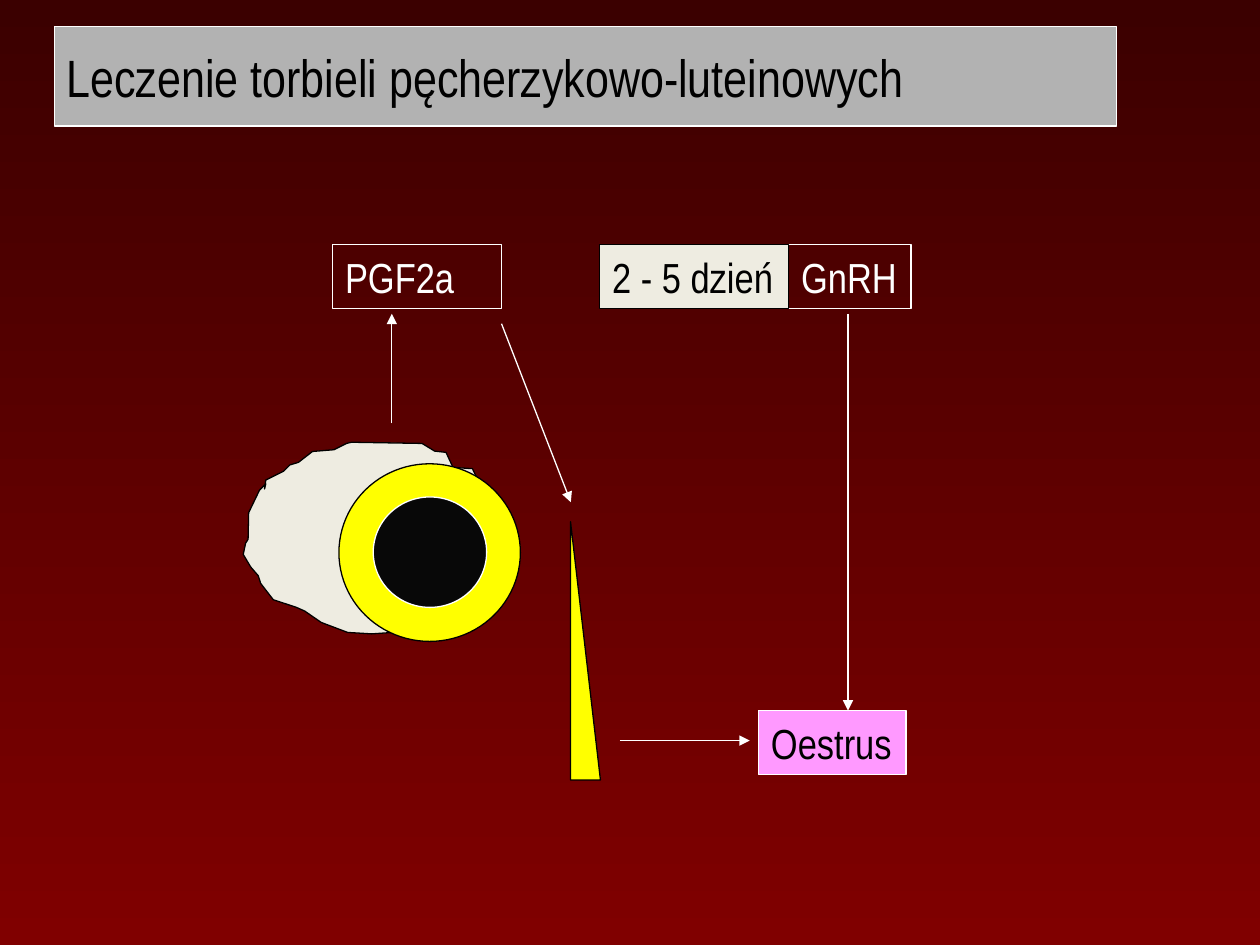
from lxml import etree
from pptx import Presentation
from pptx import util as u
from pptx.dml.color import RGBColor
from pptx.enum import shapes, text
from pptx.oxml.ns import qn

COLORS = {
    "top": "3B0000", "bottom": "800000", "white": "FFFFFF", "black": "000000",
    "grey": "B2B2B2", "cream": "EEECE1", "pink": "FF99FF", "yellow": "FFFF00",
    "cavity": "080808",
}
FONT = "Arial Narrow"
ROW_TOP, BOX_HEIGHT = 139.7, 36.72

# Content: text, (left, top, width, height), size, fill, line, text colour, wrap
BOXES = [
    ("Leczenie torbieli pęcherzykowo-luteinowych", (31, 15.1, 607, 56.9), 30,
     "grey", "white", "black", True),
    ("PGF2a", (190.1, ROW_TOP, 96.5, BOX_HEIGHT), 24, None, "white", "white", True),
    ("GnRH", (450.7, ROW_TOP, 69.9, BOX_HEIGHT), 24, None, "white", "white", False),
    ("Oestrus", (433.5, 406.1, 84.3, BOX_HEIGHT), 24, "pink", "white", "black", False),
    ("2 - 5 dzień", (342.7, ROW_TOP, 108, BOX_HEIGHT), 24, "cream", "black", "black", False),
]

# Start and end of each arrow
ARROWS = [
    ((223.9, 241.9), (223.9, 179.3)),
    ((484.6, 179.3), (484.6, 406.1)),
    ((354.2, 423.2), (428.4, 423.2)),
    ((286.6, 185), (326.2, 287)),
]

# Follicle layers and the falling hormone wedge: preset, place, fill, line
FIGURES = [
    (shapes.MSO_SHAPE.OVAL, (193.7, 265, 103.7, 101.5), "yellow", "black"),
    (shapes.MSO_SHAPE.OVAL, (213.3, 284, 64.8, 63.1), "cavity", "white"),
    (shapes.MSO_SHAPE.RIGHT_TRIANGLE, (326, 298.1, 17.1, 147.6), "yellow", "black"),
]

OVARY_OUTLINE = [
    (151.2, 279.4), (151.9, 274.3), (162, 269.3), (165.6, 265.7), (170.6, 264.2),
    (178.6, 258), (190.8, 257), (198, 253.4), (200.9, 252.7), (241.2, 253.4),
    (248.4, 257.8), (254.9, 258.5), (258.9, 267.1), (270, 267.8), (275.8, 280.1),
    (278.6, 291.6), (284.4, 296.6), (290.9, 298.1), (294.8, 312.5), (290.9, 326.2),
    (288.7, 333.4), (278.6, 339.8), (272.2, 349.9), (247.7, 357.1), (234.7, 360.7),
    (212.4, 362.2), (198.7, 361.4), (183.6, 355.7), (174.2, 349.2), (169.2, 347),
    (156.2, 342.7), (149, 333.4), (147.6, 329), (143.3, 324), (139, 316.8),
    (140.4, 310.3), (141.8, 308.2), (142.1, 293), (148.3, 280.1), (151.9, 276.5),
]


def rgb(name):
    return RGBColor.from_string(COLORS[name])


def style(shape, fill, line):
    shape.shadow.inherit = False
    if fill:
        shape.fill.solid()
        shape.fill.fore_color.rgb = rgb(fill)
    else:
        shape.fill.background()
    shape.line.color.rgb = rgb(line)
    shape.line.width = u.Pt(0.75)


def add_preset(slide, preset, place, fill, line):
    shape = slide.shapes.add_shape(preset, *map(u.Pt, place))
    style(shape, fill, line)
    return shape


def add_box(slide, words, place, size, fill, line, color, wrap):
    shape = add_preset(slide, shapes.MSO_SHAPE.RECTANGLE, place, fill, line)
    frame = shape.text_frame
    frame.text = words
    frame.word_wrap = wrap
    frame.vertical_anchor = text.MSO_ANCHOR.MIDDLE
    paragraph = frame.paragraphs[0]
    paragraph.alignment = text.PP_ALIGN.LEFT
    font = paragraph.runs[0].font
    font.name, font.size, font.color.rgb = FONT, u.Pt(size), rgb(color)


def add_arrow(slide, start, end):
    arrow = slide.shapes.add_connector(
        shapes.MSO_CONNECTOR.STRAIGHT, *map(u.Pt, start + end))
    arrow.line.color.rgb = rgb("white")
    arrow.line.width = u.Pt(0.75)
    etree.SubElement(arrow.line._get_or_add_ln(), qn("a:tailEnd"), type="triangle")
    etree.SubElement(arrow._element.spPr, qn("a:effectLst"))


def add_ovary(slide):
    # Outline units are tenths of a point
    points = [(round(x * 10), round(y * 10)) for x, y in OVARY_OUTLINE]
    builder = slide.shapes.build_freeform(*points[0], scale=u.Pt(0.1))
    builder.add_line_segments(points[1:], close=True)
    style(builder.convert_to_shape(), "cream", "black")


def main():
    presentation = Presentation()
    presentation.slide_width, presentation.slide_height = u.Pt(720), u.Pt(540)
    slide = presentation.slides.add_slide(presentation.slide_layouts[6])

    # Background, dark at the top
    fill = slide.background.fill
    fill.gradient()
    fill.gradient_angle = 270
    for stop, name, position in zip(fill.gradient_stops, ("top", "bottom"), (0, 1)):
        stop.color.rgb = rgb(name)
        stop.position = position

    # Title and treatment steps
    for box in BOXES:
        add_box(slide, *box)

    # Ovary with its cyst, and the wedge
    add_ovary(slide)
    for figure in FIGURES:
        add_preset(slide, *figure)

    # Arrows between the steps
    for start, end in ARROWS:
        add_arrow(slide, start, end)

    presentation.save("out.pptx")


if __name__ == "__main__":
    main()
